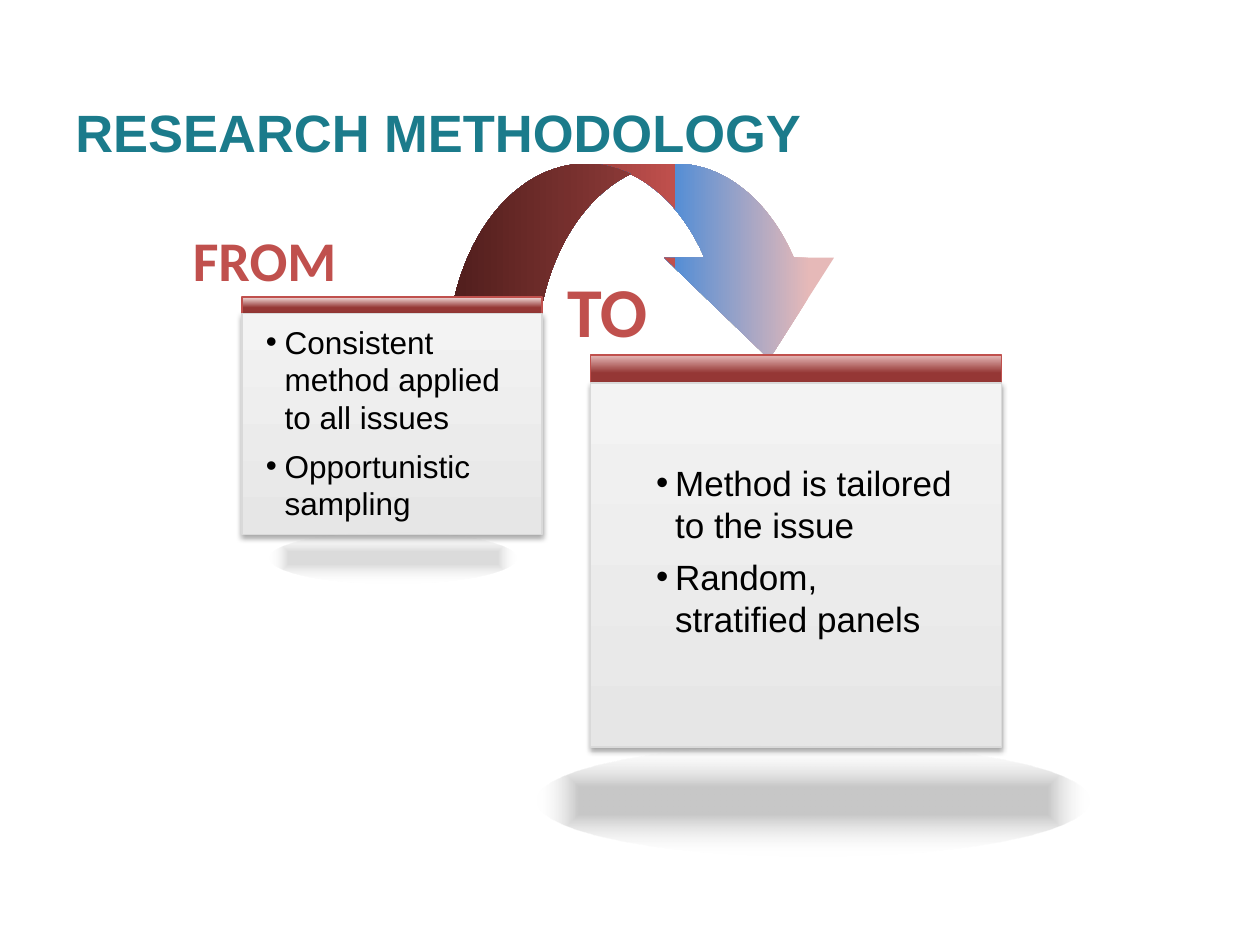
"""Build the research methodology slide: a small FROM card leading to a large TO card."""
from dataclasses import dataclass
from typing import NamedTuple, Optional

from lxml.etree import SubElement
from pptx import Presentation
from pptx.dml.color import RGBColor
from pptx.enum.shapes import MSO_SHAPE
from pptx.enum.text import MSO_ANCHOR, PP_ALIGN
from pptx.oxml.ns import qn
from pptx.util import Cm, Pt

RED = "C0504D"
TEAL = "1B7B8B"
BLACK = "000000"
INDENT = Cm(0.38)


class Box(NamedTuple):
    left: float
    top: float
    width: float
    height: float

    def lengths(self) -> list:
        return [Cm(value) for value in self]


class Stop(NamedTuple):
    position: int
    color: str
    opacity: int = 100


@dataclass
class Card:
    bar: Box
    body: Box
    bar_light: str
    list_area: Box
    points: list
    text_size: int
    reflection: Box
    reflection_opacity: int


CARDS = [
    Card(Box(4.88, 5.99, 6.05, 0.38), Box(4.88, 6.32, 6.05, 4.45), "F2DCDB",
         Box(5.11, 6.38, 5.33, 4.32),
         ["Consistent method applied to all issues", "Opportunistic sampling"], 18,
         Box(5.44, 10.74, 4.98, 1.02), 14),
    Card(Box(11.91, 7.16, 8.28, 0.64), Box(11.91, 7.72, 8.28, 7.34), "E6B9B8",
         Box(12.98, 9.17, 6.5, 3.89),
         ["Method is tailored to the issue", "Random, stratified panels"], 20,
         Box(10.82, 15.01, 11.15, 2.26), 22),
]


def rgb(color: str) -> RGBColor:
    return RGBColor.from_string(color)


def add_color(parent, color: str, opacity: int) -> None:
    node = SubElement(parent, qn("a:srgbClr"), val=color)
    if opacity < 100:
        SubElement(node, qn("a:alpha"), val=str(opacity * 1000))


def fill_gradient(shape, stops: list, angle: Optional[int]) -> None:
    """Fill along a clockwise angle, or from the centre outwards when angle is None."""
    shape.fill.gradient()
    gradient = shape.element.spPr.find(qn("a:gradFill"))
    for child in list(gradient):
        gradient.remove(child)
    stop_list = SubElement(gradient, qn("a:gsLst"))
    for stop in stops:
        node = SubElement(stop_list, qn("a:gs"), pos=str(stop.position * 1000))
        add_color(node, stop.color, stop.opacity)
    if angle is None:
        radial = SubElement(gradient, qn("a:path"), path="shape")
        SubElement(radial, qn("a:fillToRect"), l="50000", t="50000", r="50000", b="50000")
    else:
        SubElement(gradient, qn("a:lin"), ang=str(angle * 60000), scaled="0")


def add_gradient_shape(slide, preset, box: Box, stops: list,
                       angle: Optional[int] = 270, outline: Optional[str] = None):
    shape = slide.shapes.add_shape(preset, *box.lengths())
    shape.shadow.inherit = False
    fill_gradient(shape, stops, angle)
    if outline:
        shape.line.color.rgb = rgb(outline)
        shape.line.width = Pt(0.75)
    else:
        shape.line.fill.background()
    return shape


def add_drop_shadow(shape) -> None:
    effects = shape.element.spPr.find(qn("a:effectLst"))
    shadow = SubElement(effects, qn("a:outerShdw"), blurRad=str(Pt(3.1)),
                        dist=str(Pt(1.8)), dir="5400000", rotWithShape="0")
    add_color(shadow, BLACK, 35)


def add_text(slide, box: Box, lines: list, *, size: int, color: str = BLACK,
             font: str = "Arial", bold: bool = False, align=PP_ALIGN.LEFT,
             anchor=MSO_ANCHOR.TOP, wrap: bool = True, bullets: bool = False) -> None:
    frame = slide.shapes.add_textbox(*box.lengths()).text_frame
    frame.word_wrap = wrap
    frame.vertical_anchor = anchor
    for index, line in enumerate(lines):
        paragraph = frame.add_paragraph() if index else frame.paragraphs[0]
        paragraph.alignment = align
        if bullets:
            paragraph.space_after = Pt(6)
            properties = paragraph._p.get_or_add_pPr()
            properties.set("marL", str(INDENT))
            properties.set("indent", str(-INDENT))
            SubElement(properties, qn("a:buFont"), typeface="Arial")
            SubElement(properties, qn("a:buChar"), char="•")
        run = paragraph.add_run()
        run.text = line
        run.font.name = font
        run.font.size = Pt(size)
        run.font.bold = bold
        run.font.color.rgb = rgb(color)


def add_arrow(slide) -> None:
    stops = [Stop(11, "E6B9B8"), Stop(44, "558ED5"), Stop(44, RED), Stop(100, "632523")]
    arrow = add_gradient_shape(slide, MSO_SHAPE.CURVED_DOWN_ARROW,
                               Box(9.02, 3.3, 8.2, 3.94), stops, angle=180)
    for index, value in enumerate((0.457, 0.869, 0.519)):
        arrow.adjustments[index] = value


def add_card(slide, card: Card) -> None:
    add_gradient_shape(slide, MSO_SHAPE.RECTANGLE, card.bar,
                       [Stop(44, "953735"), Stop(100, card.bar_light)], outline=RED)
    body = add_gradient_shape(slide, MSO_SHAPE.RECTANGLE, card.body,
                              [Stop(0, "E6E6E6"), Stop(100, "F3F3F3")], outline="D9D9D9")
    add_drop_shadow(body)
    add_text(slide, card.list_area, card.points, size=card.text_size, bullets=True)
    add_gradient_shape(slide, MSO_SHAPE.OVAL, card.reflection,
                       [Stop(24, BLACK, card.reflection_opacity), Stop(100, "FFFFFF", 0)],
                       angle=None)


def main() -> None:
    deck = Presentation()
    deck.slide_width, deck.slide_height = Cm(25.4), Cm(19.05)
    slide = deck.slides.add_slide(deck.slide_layouts[6])
    add_text(slide, Box(1.27, 1.07, 23.29, 3.18), ["RESEARCH METHODOLOGY"], size=30,
             color=TEAL, bold=True, anchor=MSO_ANCHOR.MIDDLE)
    for label, box, size in (("TO", Box(11.15, 5.26, 2.18, 1.96), 40),
                             ("FROM", Box(3.61, 4.42, 3.45, 1.63), 32)):
        add_text(slide, box, [label], size=size, color=RED, font="Calibri", bold=True,
                 align=PP_ALIGN.CENTER, wrap=False)
    add_arrow(slide)
    for card in CARDS:
        add_card(slide, card)
    deck.save("out.pptx")


if __name__ == "__main__":
    main()
